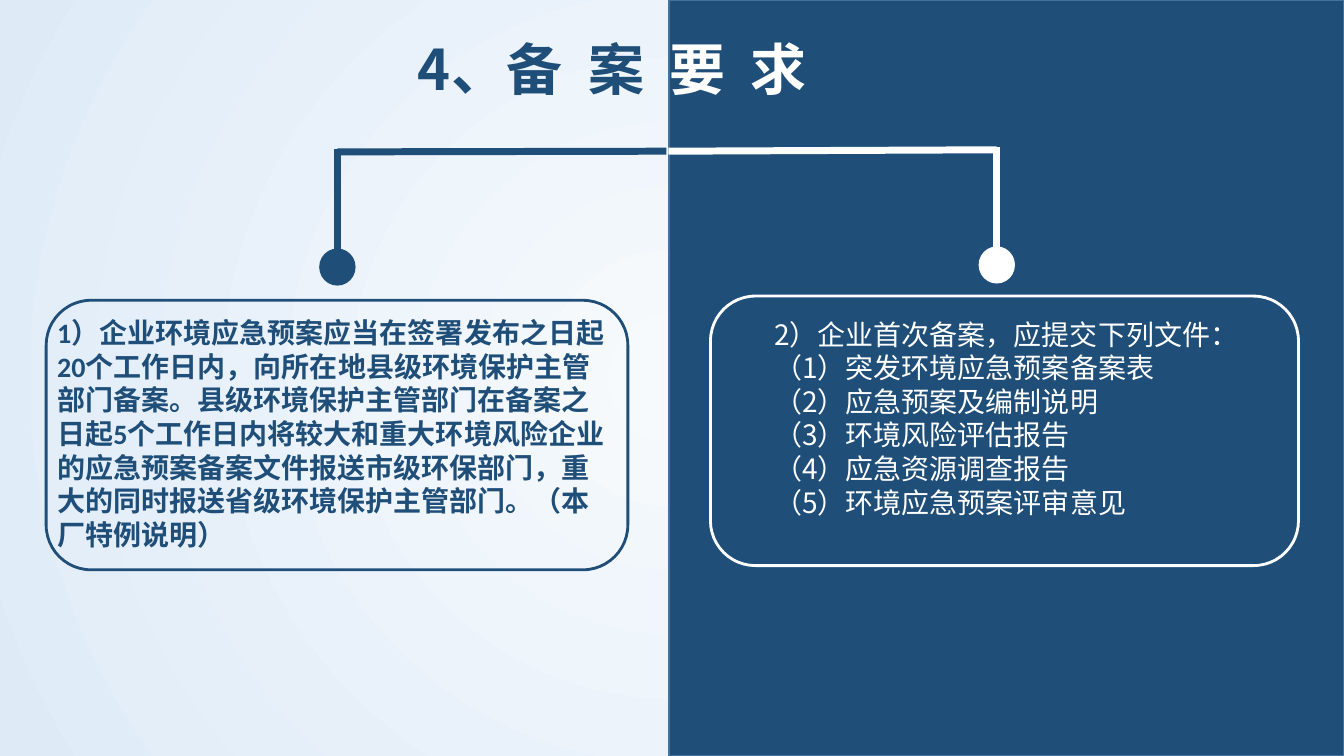
from dataclasses import dataclass

from lxml.etree import SubElement
from pptx import Presentation
from pptx.dml.color import RGBColor
from pptx.enum.shapes import MSO_CONNECTOR, MSO_SHAPE
from pptx.oxml.ns import qn
from pptx.util import Pt


@dataclass(frozen=True)
class Theme:
    navy: RGBColor = RGBColor.from_string("1F4E79")
    edge: RGBColor = RGBColor.from_string("43739E")
    white: RGBColor = RGBColor.from_string("FFFFFF")
    glow: RGBColor = RGBColor.from_string("F7FAFD")
    mist: RGBColor = RGBColor.from_string("DEEBF7")
    east_font: str = "Noto Sans CJK SC"
    latin_font: str = "Calibri"
    title_size: int = 40
    body_size: int = 20
    leading: float = 1.2
    title_tracking: int = 18


class SlideBuilder:
    """Draws styled elements on one slide, with lengths in points."""

    def __init__(self, presentation, theme):
        self.theme = theme
        self.slide = presentation.slides.add_slide(presentation.slide_layouts[6])

    def background(self):
        fill = self.slide.background.fill
        fill.gradient()
        for stop, color in zip(fill.gradient_stops, (self.theme.glow, self.theme.mist)):
            stop.color.rgb = color
        linear = next(self.slide.element.iter(qn("a:lin")))
        gradient = linear.getparent()
        gradient.remove(linear)
        circle = SubElement(gradient, qn("a:path"), path="circle")
        SubElement(circle, qn("a:fillToRect"), l="50000", t="50000", r="50000", b="50000")

    def shape(self, kind, box, fill=None, line=None, width=1):
        shape = self.slide.shapes.add_shape(kind, *map(Pt, box))
        shape.shadow.inherit = False
        for part, color in ((shape.fill, fill), (shape.line.fill, line)):
            if color is None:
                part.background()
            else:
                part.solid()
                part.fore_color.rgb = color
        if line is not None:
            shape.line.width = Pt(width)

    def line(self, start, end, color):
        connector = self.slide.shapes.add_connector(
            MSO_CONNECTOR.STRAIGHT, *map(Pt, (*start, *end)))
        connector.line.color.rgb = color
        connector.line.width = Pt(5)
        SubElement(connector.element.spPr, qn("a:effectLst"))

    def text(self, box, paragraphs, size, font, bold=False):
        frame = self.slide.shapes.add_textbox(*map(Pt, box)).text_frame
        frame.word_wrap = True
        style = {"name": font, "size": Pt(size), "bold": bold}
        for index, runs in enumerate(paragraphs):
            paragraph = frame.add_paragraph() if index else frame.paragraphs[0]
            paragraph.line_spacing = Pt(size * self.theme.leading)
            for words, color, tracking in runs:
                run = paragraph.add_run()
                run.text = words
                for name, value in style.items():
                    setattr(run.font, name, value)
                run.font.color.rgb = color
                properties = run.font._element
                properties.set("spc", str(tracking * 100))
                SubElement(properties, qn("a:ea"), typeface=self.theme.east_font)

    def branch(self, stem, top, inner, color):
        self.line((inner, 108), (stem, top + 2), color)
        self.line((stem, top), (stem, top + 73), color)
        self.shape(MSO_SHAPE.OVAL, (stem - 13, top + 71, 26, 26.5), fill=color)

    def card(self, box, color):
        self.shape(MSO_SHAPE.ROUNDED_RECTANGLE, box, line=color, width=2)


def main():
    presentation = Presentation()
    presentation.slide_width, presentation.slide_height = Pt(960), Pt(540)
    theme = Theme()
    builder = SlideBuilder(presentation, theme)
    builder.background()
    builder.shape(MSO_SHAPE.RECTANGLE, (478, 0, 482, 540), theme.navy, theme.edge)

    title = [
        ("4、", theme.navy, 0),
        ("备案", theme.navy, theme.title_tracking),
        ("要求", theme.white, theme.title_tracking),
    ]
    builder.text((291.5, 21, 453, 55), [title], theme.title_size, theme.east_font, bold=True)

    builder.branch(712, 105, 477.5, theme.white)
    builder.branch(241, 106.5, 476, theme.navy)

    deadline = (
        "1）企业环境应急预案应当在签署发布之日起20个工作日内，向所在地县级环境保护主管"
        "部门备案。县级环境保护主管部门在备案之日起5个工作日内将较大和重大环境风险企业的"
        "应急预案备案文件报送市级环保部门，重大的同时报送省级环境保护主管部门。"
        "（本厂特例说明）"
    )
    builder.text((33.8, 222, 412.6, 177), [[(deadline, theme.navy, 0)]],
                 theme.body_size, theme.latin_font, bold=True)

    documents = ["突发环境应急预案备案表", "应急预案及编制说明", "环境风险评估报告",
                 "应急资源调查报告", "环境应急预案评审意见"]
    lines = ["2）企业首次备案，应提交下列文件："]
    lines += [f"（{number}）{name}" for number, name in enumerate(documents, 1)]
    builder.text((545.8, 223, 374.4, 153), [[(words, theme.white, 0)] for words in lines],
                 theme.body_size, theme.east_font)

    builder.card((33, 214.5, 415.5, 192.5), theme.navy)
    builder.card((507.5, 211.5, 420, 192.5), theme.white)
    presentation.save("out.pptx")


if __name__ == "__main__":
    main()
